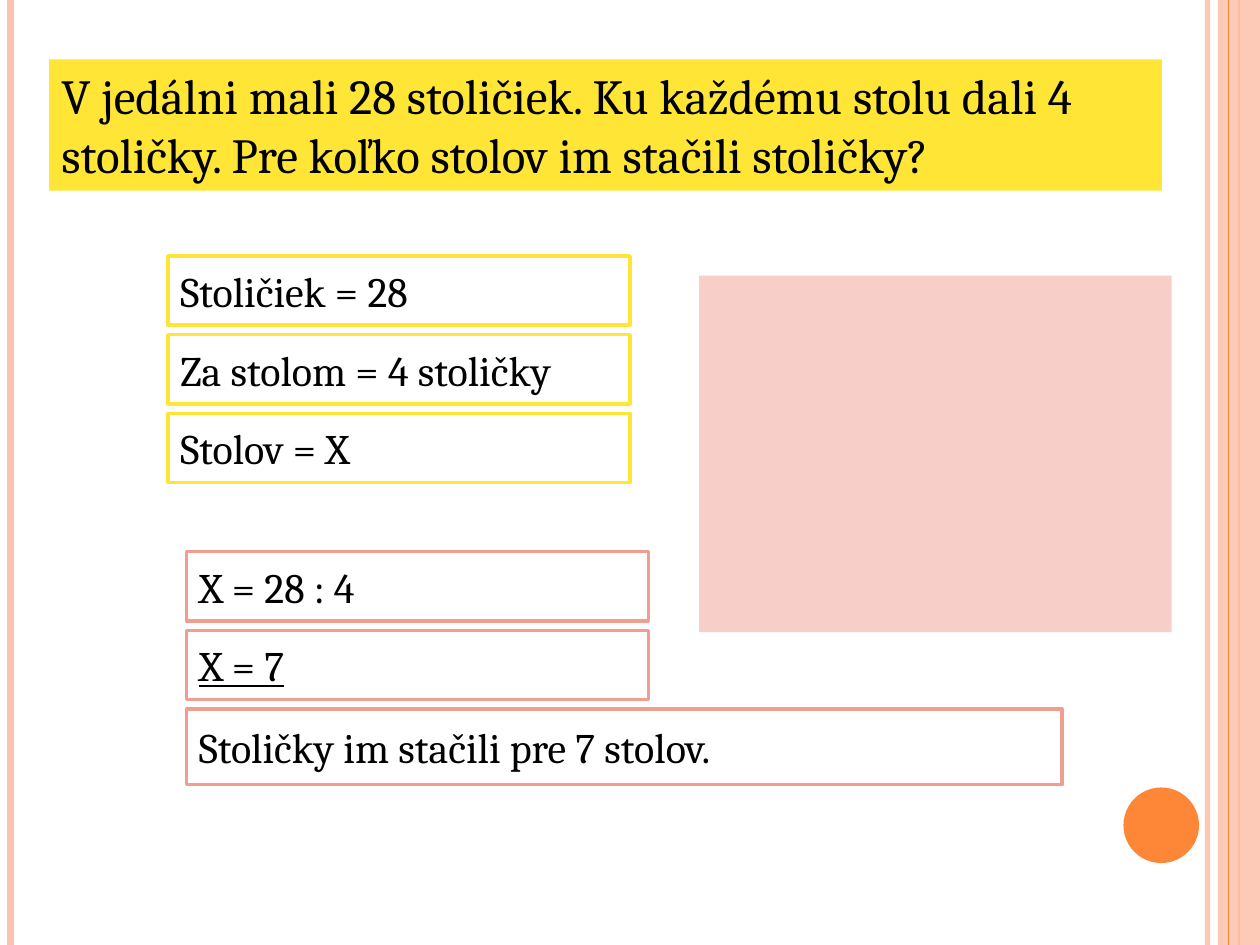
from lxml import etree
from pptx import Presentation
from pptx.dml.color import RGBColor
from pptx.enum import shapes, text
from pptx.oxml.ns import qn
from pptx.util import Pt

WIDTH, HEIGHT = 720, 540
FONT = "Cambria"
BLACK = RGBColor(0x00, 0x00, 0x00)
WHITE = RGBColor(0xFF, 0xFF, 0xFF)
YELLOW = RGBColor(0xFF, 0xE6, 0x36)
ORANGE = RGBColor(0xFE, 0x86, 0x37)
PEACH = RGBColor(0xFE, 0xC3, 0xAE)
SALMON = RGBColor(0xF1, 0x9E, 0x91)
PINK = RGBColor(0xF8, 0xCF, 0xC8)
BOX_WIDTH, BOX_HEIGHT, BOX_PITCH = 264, 39.6, 45


def set_opacity(element, percent):
    color = element.find(".//" + qn("a:srgbClr"))
    etree.SubElement(color, qn("a:alpha"), val=str(percent * 1000))


def add_stripe(slide, x, color, weight, opacity=100):
    """Draw a vertical line over the full slide height."""
    line = slide.shapes.add_connector(
        shapes.MSO_CONNECTOR.STRAIGHT, Pt(x), Pt(0), Pt(x), Pt(HEIGHT))
    line.line.color.rgb = color
    line.line.width = Pt(weight)
    properties = line._element.spPr
    if opacity < 100:
        set_opacity(properties, opacity)
    etree.SubElement(properties, qn("a:effectLst"))


def add_filled(slide, left, top, width, height, fill,
               kind=shapes.MSO_SHAPE.RECTANGLE):
    shape = slide.shapes.add_shape(
        kind, Pt(left), Pt(top), Pt(width), Pt(height))
    shape.shadow.inherit = False
    shape.fill.solid()
    shape.fill.fore_color.rgb = fill
    shape.line.fill.background()
    return shape


def write(shape, wording, size, anchor, underline=None):
    frame = shape.text_frame
    frame.word_wrap = True
    frame.vertical_anchor = anchor
    paragraph = frame.paragraphs[0]
    paragraph.text = wording
    paragraph.alignment = text.PP_ALIGN.LEFT
    font = paragraph.font
    font.name, font.size, font.underline = FONT, Pt(size), underline
    font.color.rgb = BLACK
    # The run carries the underline so that every viewer shows it.
    paragraph.runs[0].font.underline = underline


def add_box(slide, left, top, wording, border, width=BOX_WIDTH,
            height=BOX_HEIGHT, underline=None):
    box = add_filled(slide, left, top, width, height, WHITE)
    box.line.color.rgb = border
    box.line.width = Pt(2)
    write(box, wording, 24, text.MSO_ANCHOR.MIDDLE, underline)


def add_decoration(slide):
    add_stripe(slide, 690, PEACH, 3, opacity=93)
    add_stripe(slide, 6, PEACH, 4.5)
    add_stripe(slide, 708, ORANGE, 1.5)
    band = add_filled(slide, 696, 0, 24, HEIGHT, PEACH)
    set_opacity(band._element.spPr, 87)
    add_stripe(slide, 702, ORANGE, 0.75)
    add_filled(slide, 642, 450, 43.2, 43.2, ORANGE, shapes.MSO_SHAPE.OVAL)


def add_question(slide):
    question = add_filled(slide, 28, 34, 636, 75, YELLOW)
    write(question, "V jedálni mali 28 stoličiek. Ku každému stolu dali 4 "
          "stoličky. Pre koľko stolov im stačili stoličky?",
          28, text.MSO_ANCHOR.TOP)


def add_facts(slide):
    facts = ("Stoličiek = 28", "Za stolom = 4 stoličky", "Stolov = X")
    for row, fact in enumerate(facts):
        add_box(slide, 96, 146.25 + row * BOX_PITCH, fact, YELLOW)


def add_solution(slide):
    left, top = 106.5, 315.25
    add_box(slide, left, top, "X = 28 : 4", SALMON)
    add_box(slide, left, top + BOX_PITCH, "X = 7", SALMON, underline=True)
    add_box(slide, left, top + 2 * BOX_PITCH,
            "Stoličky im stačili pre 7 stolov.", SALMON,
            width=500.5, height=43.2)


def main():
    presentation = Presentation()
    presentation.slide_width, presentation.slide_height = Pt(WIDTH), Pt(HEIGHT)
    slide = presentation.slides.add_slide(presentation.slide_layouts[6])
    add_decoration(slide)
    add_question(slide)
    add_facts(slide)
    add_solution(slide)
    add_filled(slide, 399.5, 157.5, 270, 203.75, PINK)
    presentation.save("out.pptx")


if __name__ == "__main__":
    main()
